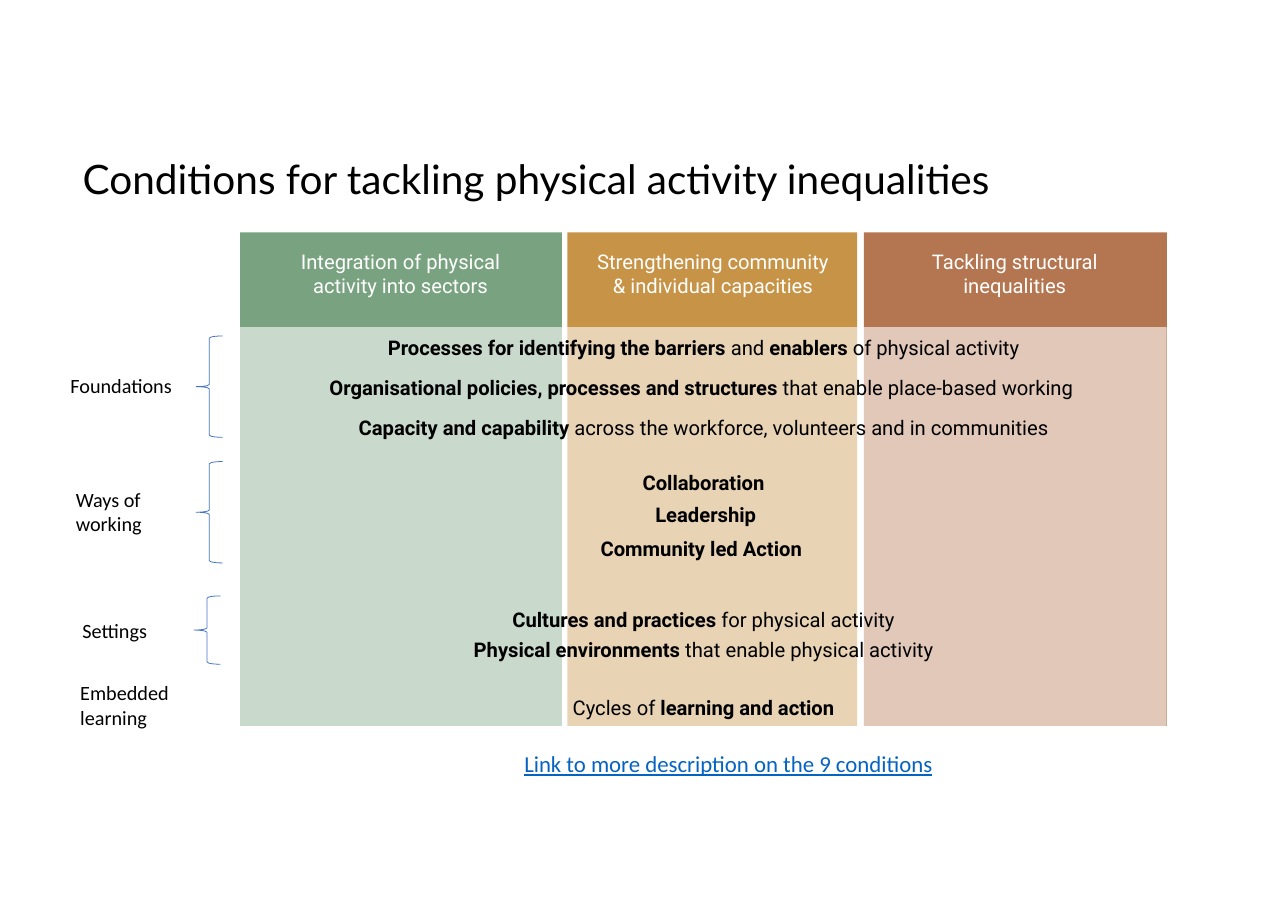
import pptx
import pptx.util
import pptx.dml.color
import pptx.enum.shapes
import pptx.enum.text
from lxml import etree

SCALE = 9144  # EMU per px, 100 px to the inch
SHAPE = pptx.enum.shapes.MSO_SHAPE
ALIGN = pptx.enum.text.PP_ALIGN
ANCHOR = pptx.enum.text.MSO_ANCHOR
HUES = {"black": "000000", "white": "FFFFFF", "green": "79A380", "gold": "C79347",
        "rust": "B47651", "blue": "4472C4", "link": "0563C1"}


def emu(*sizes):
    return [size * SCALE for size in sizes]


def color(name):
    return pptx.dml.color.RGBColor.from_string(HUES[name])


def write(frame, text, font="Calibri", size=13.2, hue="black", align=ALIGN.LEFT,
          anchor=ANCHOR.TOP, line=None, under=None):
    """Fill a text frame; parts between asterisks are bold."""
    frame.word_wrap = True
    frame.auto_size = pptx.enum.text.MSO_AUTO_SIZE.NONE
    frame.vertical_anchor = anchor
    para = frame.paragraphs[0]
    para.alignment = align
    para.line_spacing = line
    for index, part in enumerate(text.split("*")):
        if part:
            run = para.add_run()
            run.text = part
            run.font.name = font
            run.font.size = pptx.util.Pt(size)
            run.font.bold = index % 2 == 1
            run.font.underline = under
            run.font.color.rgb = color(hue)


class Board:
    def __init__(self, deck):
        self.slide = deck.slides.add_slide(deck.slide_layouts[5])
        self.shapes = self.slide.shapes

    def title(self, text, *box, **style):
        title = self.shapes.title
        title.left, title.top, title.width, title.height = emu(*box)
        write(title.text_frame, text, anchor=ANCHOR.MIDDLE, **style)

    def text(self, text, *box, **style):
        write(self.shapes.add_textbox(*emu(*box)).text_frame, text, **style)

    def block(self, hue, *box, alpha=None):
        """Draw a plain rectangle; alpha is its opacity in percent."""
        rect = self.shapes.add_shape(SHAPE.RECTANGLE, *emu(*box))
        rect.shadow.inherit = False
        rect.fill.solid()
        rect.fill.fore_color.rgb = color(hue)
        rect.line.fill.background()
        if alpha:
            tint = rect.fill._xPr.find(".//" + pptx.oxml.ns.qn("a:srgbClr"))
            etree.SubElement(tint, pptx.oxml.ns.qn("a:alpha"), val=str(alpha * 1000))

    def brace(self, *box):
        brace = self.shapes.add_shape(SHAPE.LEFT_BRACE, *emu(*box))
        brace.shadow.inherit = False
        brace.fill.background()
        brace.line.color.rgb = color("blue")
        brace.line.width = pptx.util.Pt(0.5)


COLUMNS = [  # hue, left, width, heading, its left and width
    ("rust", 784, 275, "Tackling structural inequalities", 817, 208),
    ("gold", 515, 263, "Strengthening community & individual capacities", 532, 230),
    ("green", 218, 292, "Integration of physical activity into sectors", 242, 243),
]
ROWS = [  # left, top, condition
    (273, 302, "*Processes for identifying the barriers* and *enablers* of physical activity"),
    (271, 339, "*Organisational policies, processes and structures* "
               "that enable place-based working"),
    (273, 375, "*Capacity and capability* across the workforce, volunteers and in communities"),
    (273, 425, "*Collaboration*"),
    (275, 454, "*Leadership*"),
    (271, 485, "*Community led Action*"),
    (273, 549, "*Cultures and practices* for physical activity"),
    (273, 577, "*Physical environments* that enable physical activity"),
    (273, 629, "Cycles of *learning and action*"),
]
GROUPS = [  # label, left, top, width, height
    ("Foundations", 54, 334, 119, 32),
    ("Ways of working", 59, 437, 130, 55),
    ("Settings", 65, 556, 130, 32),
    ("Embedded learning", 63, 613, 119, 55),
]
BRACES = [(178, 305, 24, 92), (178, 419, 24, 92), (176, 541, 24, 62)]


def main():
    deck = pptx.Presentation()
    deck.slide_width, deck.slide_height = emu(1169, 827)
    board = Board(deck)
    board.title("Conditions for tackling physical activity inequalities",
                65, 105, 951, 120, font="Lato", size=26.5, line=0.9)
    for hue, left, width, head, start, span in COLUMNS:
        board.block(hue, left, 211, width, 448)
        board.text(head, start, 221, span, 55, font="Roboto", hue="white",
                   align=ALIGN.CENTER)
    board.block("white", 218, 297, 841, 362, alpha=60)
    for left, top, text in ROWS:
        board.text(text, left, top, 731, 26, font="Roboto", align=ALIGN.CENTER,
                   anchor=ANCHOR.MIDDLE)
    for box in BRACES:
        board.brace(*box)
    for label, *box in GROUPS:
        board.text(label, *box)
    board.text("Link to more description on the 9 conditions", 466, 676, 421, 35,
               size=14.9, hue="link", under=True)
    deck.save("out.pptx")


if __name__ == "__main__":
    main()
